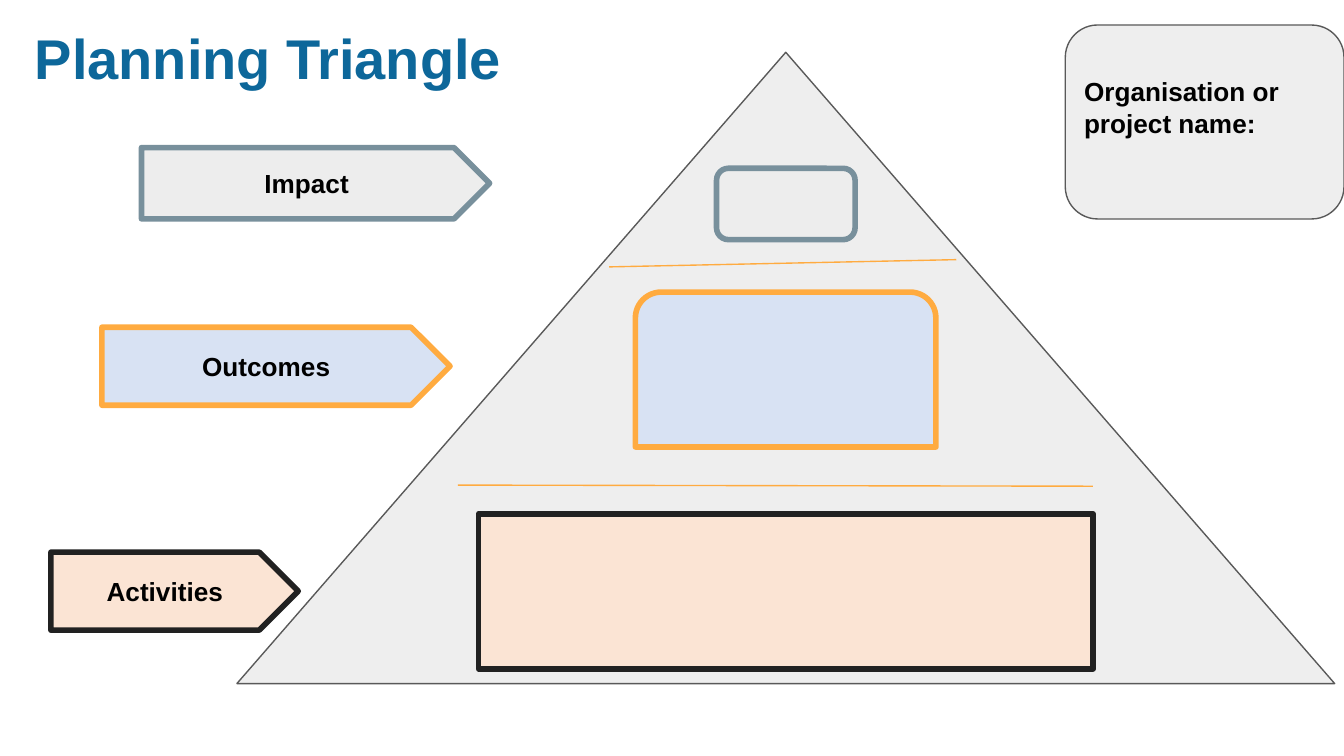
"""Build the Planning Triangle slide."""
from lxml.etree import SubElement
from pptx import Presentation
from pptx.dml.color import RGBColor
from pptx.enum.shapes import MSO_CONNECTOR, MSO_SHAPE
from pptx.enum.text import MSO_ANCHOR, PP_ALIGN
from pptx.oxml.ns import qn
from pptx.util import Pt

COLORS = {
    "title": "0D679A", "text": "000000", "triangle": "EEEEEE", "outline": "595959",
    "impact": "EDEDED", "impact_line": "78909C",
    "outcomes": "D8E2F3", "outcomes_line": "FFAB40",
    "activities": "FBE4D4", "activities_line": "212121",
}


def add_box(kind, bounds, fill, line, width):
    shape = slide.shapes.add_shape(kind, *[Pt(value) for value in bounds])
    shape.shadow.inherit = False
    shape.fill.solid()
    shape.fill.fore_color.rgb = RGBColor.from_string(COLORS[fill])
    shape.line.color.rgb = RGBColor.from_string(COLORS[line])
    shape.line.width = Pt(width)
    return shape


def set_text(shape, text, size, color, alignment, anchor, insets):
    frame = shape.text_frame
    frame.word_wrap = True
    frame.vertical_anchor = anchor
    frame.margin_left = frame.margin_right = Pt(5)
    frame.margin_top, frame.margin_bottom = [Pt(inset) for inset in insets]
    frame.text = text
    paragraph = frame.paragraphs[0]
    paragraph.alignment = alignment
    font = paragraph.runs[0].font
    font.name = "Arial"
    font.size = Pt(size)
    font.bold = True
    font.color.rgb = RGBColor.from_string(COLORS[color])
    return paragraph


presentation = Presentation()
presentation.slide_width = Pt(720)
presentation.slide_height = Pt(405)
slide = presentation.slides.add_slide(presentation.slide_layouts[6])

add_box(MSO_SHAPE.FLOWCHART_EXTRACT, (126.9, 28, 588.1, 338.2), "triangle", "outline", 0.75)

title = slide.shapes.add_textbox(Pt(13.7), Pt(13.7), Pt(509), Pt(38))
heading = set_text(title, "Planning Triangle", 30, "title", PP_ALIGN.LEFT, MSO_ANCHOR.TOP, (3, 3))
heading.line_spacing = 0.9

labels = [
    ("Impact", (75.8, 79.1, 186.5, 38.2)),
    ("Outcomes", (54.6, 175.3, 186.5, 41.8)),
    ("Activities", (27.3, 295.8, 132.5, 41.8)),
]
for name, bounds in labels:
    level = name.lower()
    label = add_box(MSO_SHAPE.PENTAGON, bounds, level, f"{level}_line", 3)
    set_text(label, name, 14, "text", PP_ALIGN.CENTER, MSO_ANCHOR.MIDDLE, (3, 3))

for ends in [(326.3, 143, 512.3, 139.1), (245.3, 259.9, 585.5, 260.5)]:
    divider = slide.shapes.add_connector(MSO_CONNECTOR.STRAIGHT, *[Pt(value) for value in ends])
    divider.line.color.rgb = RGBColor.from_string(COLORS["outcomes_line"])
    divider.line.width = Pt(0.75)
    SubElement(divider._element.spPr, qn("a:effectLst"))

project = add_box(MSO_SHAPE.ROUNDED_RECTANGLE, (570.7, 13.4, 149.3, 103.9), "triangle", "outline", 0.75)
set_text(project, "Organisation or project name:", 14, "text", PP_ALIGN.LEFT, MSO_ANCHOR.MIDDLE, (5, 21))

fields = [
    ("activities", MSO_SHAPE.RECTANGLE, (256.4, 275.3, 329.2, 83)),
    ("outcomes", MSO_SHAPE.ROUND_2_SAME_RECTANGLE, (340.4, 156.5, 161, 83)),
    ("impact", MSO_SHAPE.ROUNDED_RECTANGLE, (383.9, 90.2, 74.2, 38.2)),
]
for level, kind, bounds in fields:
    add_box(kind, bounds, level, f"{level}_line", 3)

presentation.save("out.pptx")
